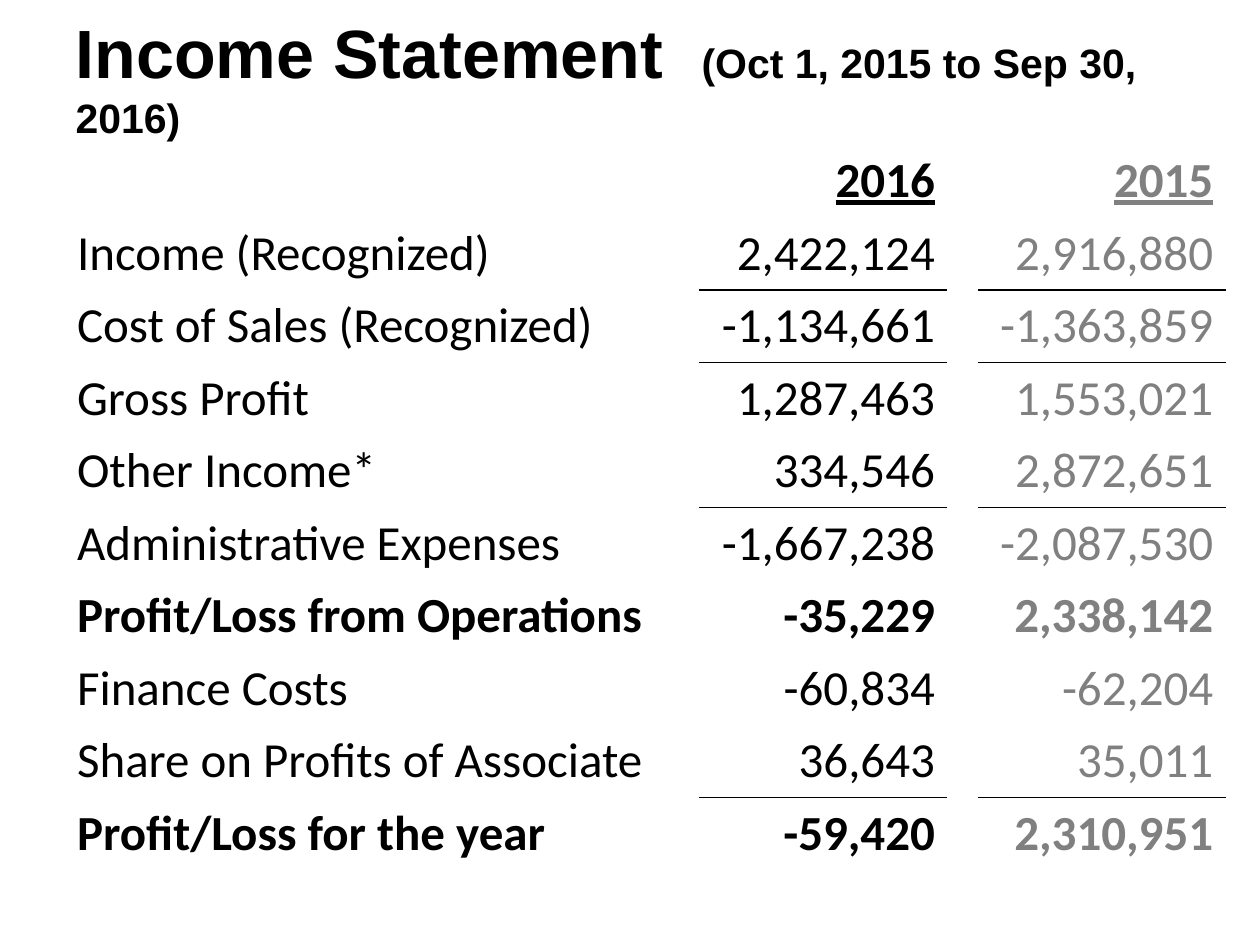
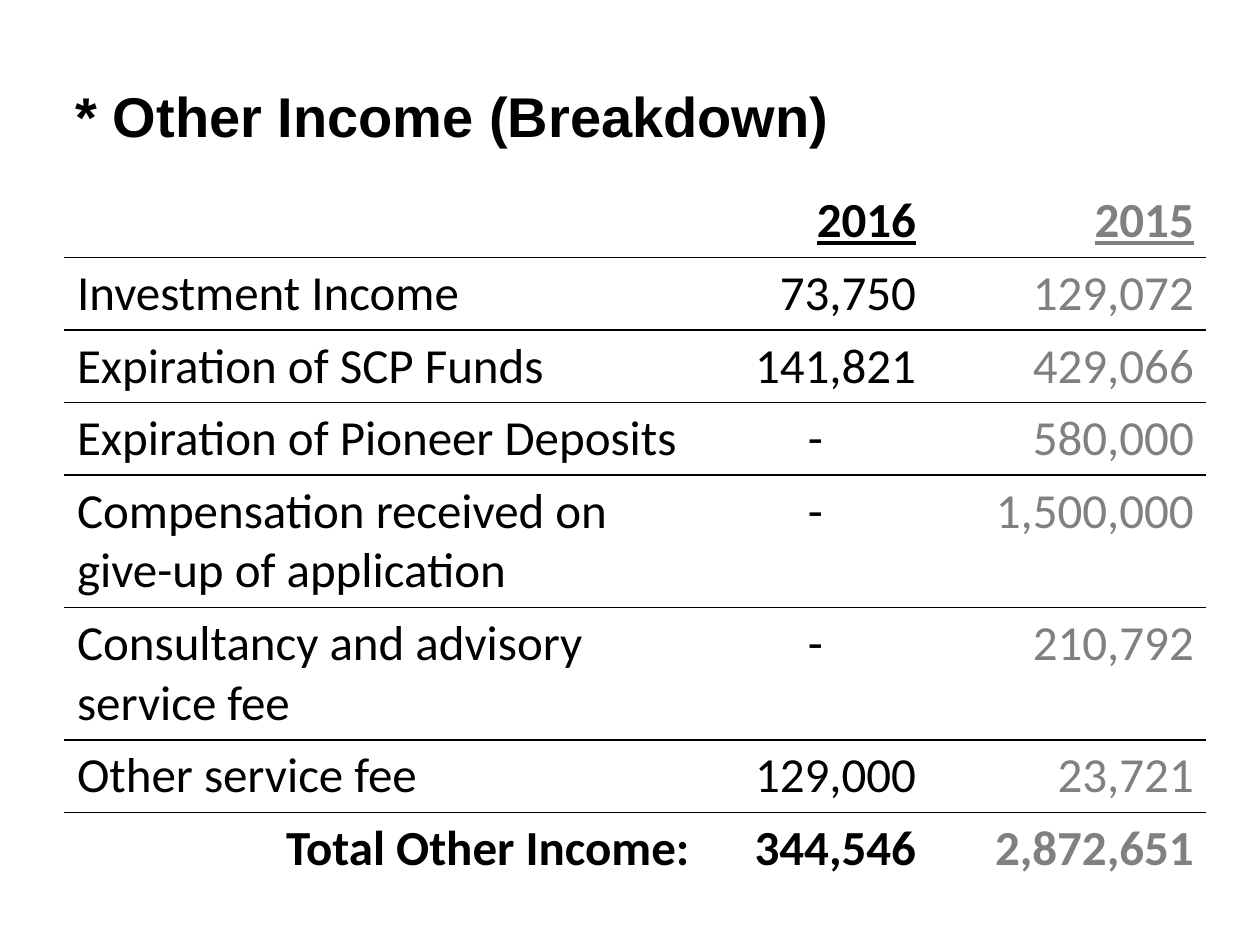
from lxml import etree
from pptx import Presentation
from pptx.dml.color import RGBColor
from pptx.enum.text import MSO_ANCHOR, MSO_AUTO_SIZE, PP_ALIGN
from pptx.oxml import parse_xml
from pptx.oxml.ns import nsdecls, qn
from pptx.util import Cm, Pt

BLACK = "000000"
GREY = "808080"
NO_STYLE = "{2D5ABB26-0587-4C30-8999-92F81FD0307C}"
ROW_HEIGHT = 1.46


def add_run(paragraph, text, font, size, color, bold=False, underline=False):
    run = paragraph.add_run()
    run.text = text
    run.font.name = font
    run.font.size = Pt(size)
    run.font.bold = bold
    run.font.underline = underline
    run.font.color.rgb = RGBColor.from_string(color)


def rule_below(cell):
    line = parse_xml(
        f'<a:lnB {nsdecls("a")} w="12700"><a:solidFill>'
        f'<a:srgbClr val="{BLACK}"/></a:solidFill></a:lnB>'
    )
    cell.fill.background()
    cell._tc.get_or_add_tcPr().insert(0, line)


statement = {
    "title": [("Income Statement", 39), ("\t(Oct 1, 2015 to Sep 30, 2016)", 23.4)],
    "title_top": 0.53,
    "table_top": 2.92,
    "columns": [12.8, 5, 0.61, 5],
    "rows": [
        ("", "2016", "2015"),
        ("Income (Recognized)", "2,422,124", "2,916,880"),
        ("Cost of Sales (Recognized)", "-1,134,661", "-1,363,859"),
        ("Gross Profit", "1,287,463", "1,553,021"),
        ("Other Income*", "334,546", "2,872,651"),
        ("Administrative Expenses", "-1,667,238", "-2,087,530"),
        ("Profit/Loss from Operations", "-35,229", "2,338,142"),
        ("Finance Costs", "-60,834", "-62,204"),
        ("Share on Profits of Associate", "36,643", "35,011"),
        ("Profit/Loss for the year", "-59,420", "2,310,951"),
    ],
    "bold_rows": [0, 6, 9],
    "ruled_rows": [1, 2, 4, 8],
    "ruled_columns": [1, 3],
}
breakdown = {
    "title": [("* Other Income (Breakdown)", 32)],
    "title_top": 1.32,
    "table_top": 3.73,
    "columns": [12.85, 4.57, 0.8, 4.8],
    "rows": [
        ("", "2016", "2015"),
        ("Investment Income", "73,750", "129,072"),
        ("Expiration of SCP Funds", "141,821", "429,066"),
        ("Expiration of Pioneer Deposits", "-", "580,000"),
        ("Compensation received on give-up of application", "-", "1,500,000"),
        ("Consultancy and advisory service fee", "-", "210,792"),
        ("Other service fee", "129,000", "23,721"),
        ("Total Other Income:", "344,546", "2,872,651"),
    ],
    "bold_rows": [0, 7],
    "ruled_rows": range(7),
    "ruled_columns": range(4),
}

prs = Presentation()
prs.slide_width = Cm(25.4)
prs.slide_height = Cm(19.05)

for page in (statement, breakdown):
    slide = prs.slides.add_slide(prs.slide_layouts[5])

    heading = slide.shapes.title
    heading.left, heading.top = Cm(1.27), Cm(page["title_top"])
    heading.width, heading.height = Cm(24), Cm(2)
    heading.text_frame.auto_size = MSO_AUTO_SIZE.NONE
    heading.text_frame.word_wrap = True
    heading.text_frame.vertical_anchor = MSO_ANCHOR.MIDDLE
    heading_line = heading.text_frame.paragraphs[0]
    heading_line.alignment = PP_ALIGN.LEFT
    if len(page["title"]) > 1:
        tabs = etree.SubElement(heading_line._p.get_or_add_pPr(), qn("a:tabLst"))
        etree.SubElement(tabs, qn("a:tab"), pos=str(Cm(12.62)), algn="l")
    for text, size in page["title"]:
        add_run(heading_line, text, "Arial", size, BLACK, bold=True)

    rows, columns = page["rows"], page["columns"]
    frame = slide.shapes.add_table(
        len(rows), len(columns), Cm(1.3), Cm(page["table_top"]),
        Cm(sum(columns)), Cm(ROW_HEIGHT * len(rows)),
    )
    accounts = frame.table
    accounts.first_row = accounts.horz_banding = False
    next(frame.element.iter(qn("a:tableStyleId"))).text = NO_STYLE
    for column, width in zip(accounts.columns, columns):
        column.width = Cm(width)

    for r, (item, current, previous) in enumerate(rows):
        accounts.rows[r].height = Cm(ROW_HEIGHT)
        for c, text in enumerate((item, current, "", previous)):
            cell = accounts.cell(r, c)
            cell.fill.background()
            if r in page["ruled_rows"] and c in page["ruled_columns"]:
                rule_below(cell)
            if not text:
                continue
            entry = cell.text_frame.paragraphs[0]
            if text == "-":
                entry.alignment = PP_ALIGN.CENTER
            elif c > 0 or text.startswith("Total"):
                entry.alignment = PP_ALIGN.RIGHT
            add_run(entry, text, "Calibri", 28, GREY if c == 3 else BLACK,
                    bold=r in page["bold_rows"], underline=r == 0)

prs.save("out.pptx")
